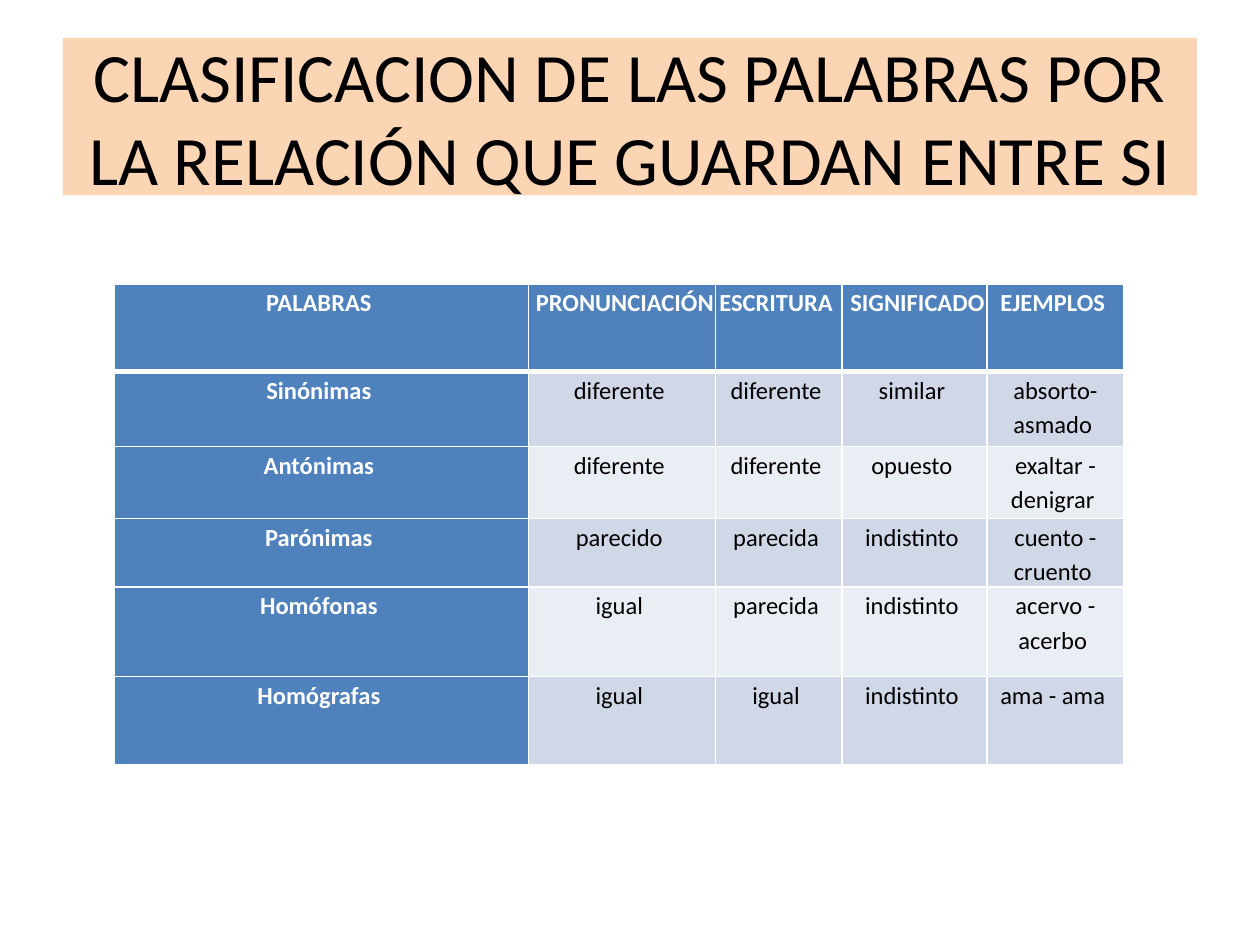
from lxml import etree
from pptx import Presentation
from pptx.dml.color import RGBColor
from pptx.enum.shapes import MSO_SHAPE
from pptx.enum.text import MSO_ANCHOR, PP_ALIGN
from pptx.oxml.ns import qn
from pptx.util import Pt

RECTANGLE = MSO_SHAPE.RECTANGLE
CENTER = PP_ALIGN.CENTER
MIDDLE = MSO_ANCHOR.MIDDLE

TITLE = "CLASIFICACION DE LAS PALABRAS POR LA RELACIÓN QUE GUARDAN ENTRE SI"
ROWS = [
    ["PALABRAS ", " PRONUNCIACIÓN ", "ESCRITURA ", " SIGNIFICADO ", "EJEMPLOS "],
    ["Sinónimas ", "diferente ", "diferente ", "similar ", "absorto-asmado "],
    ["Antónimas ", "diferente ", "diferente ", "opuesto ", "exaltar - denigrar "],
    ["Parónimas ", "parecido ", "parecida ", "indistinto ", "cuento - cruento "],
    ["Homófonas ", "igual ", "parecida ", "indistinto ", "acervo - acerbo "],
    ["Homógrafas ", "igual ", "igual ", "indistinto ", "ama - ama "],
]
COLUMN_WIDTHS = [236.6, 106.8, 72.4, 82.8, 78.2]
ROW_HEIGHTS = [50, 43, 41, 36, 51, 50.4]


def color(value):
    return RGBColor.from_string(value)


def write_text(frame, text, size=14, hex_color="000000", bold=False, font="Calibri",
               line_spacing=None, space_after=None):
    frame.word_wrap = True
    paragraph = frame.paragraphs[0]
    paragraph.alignment = CENTER
    paragraph.line_spacing = line_spacing
    paragraph.space_after = space_after
    run = paragraph.add_run()
    run.text = text
    run.font.name = font
    run.font.size = Pt(size)
    run.font.bold = bold
    run.font.color.rgb = color(hex_color)


class SlideBuilder:
    accent = "4F81BD"
    bands = ("D0D8E8", "E9EDF4")
    white = "FFFFFF"
    title_fill = "FCD5B5"

    def __init__(self, slide):
        self.slide = slide

    def title(self, text, left, top, width, height):
        shape = self.slide.shapes.add_shape(
            RECTANGLE, Pt(left), Pt(top), Pt(width), Pt(height))
        shape.shadow.inherit = False
        shape.fill.solid()
        shape.fill.fore_color.rgb = color(self.title_fill)
        shape.line.fill.background()
        shape.text_frame.vertical_anchor = MIDDLE
        write_text(shape.text_frame, text, size=39.6)

    def borders(self, cell, **widths):
        properties = cell._tc.get_or_add_tcPr()
        # Border lines must come before the fill, in this order
        for position, side in enumerate("LRTB"):
            line = etree.Element(qn(f"a:ln{side}"), w=str(Pt(widths.get(side, 1))))
            fill = etree.SubElement(line, qn("a:solidFill"))
            etree.SubElement(fill, qn("a:srgbClr"), val=self.white)
            properties.insert(position, line)

    def cell(self, cell, text, row, column):
        heading = row == 0 or column == 0
        cell.margin_left = cell.margin_right = cell.margin_top = cell.margin_bottom = 0
        cell.fill.solid()
        cell.fill.fore_color.rgb = color(
            self.accent if heading else self.bands[(row - 1) % 2])
        write_text(cell.text_frame, text, bold=heading,
                   hex_color=self.white if heading else "000000",
                   line_spacing=1.15, space_after=Pt(10))
        self.borders(cell, T=3 if row == 1 else 1, B=3 if row == 0 else 1)

    def table(self, rows, left, top, widths, heights):
        table = self.slide.shapes.add_table(
            len(rows), len(widths), Pt(left), Pt(top),
            Pt(sum(widths)), Pt(sum(heights))).table
        for column, width in zip(table.columns, widths):
            column.width = Pt(width)
        for table_row, height in zip(table.rows, heights):
            table_row.height = Pt(height)
        for row, texts in enumerate(rows):
            for column, text in enumerate(texts):
                self.cell(table.cell(row, column), text, row, column)


def main():
    presentation = Presentation()
    presentation.slide_width, presentation.slide_height = Pt(720), Pt(540)
    builder = SlideBuilder(presentation.slides.add_slide(presentation.slide_layouts[6]))

    # Title band
    builder.title(TITLE, 36, 21.6, 648, 90)

    # Word classification table
    builder.table(ROWS, 65.5, 162.3, COLUMN_WIDTHS, ROW_HEIGHTS)

    presentation.save("out.pptx")


if __name__ == "__main__":
    main()
